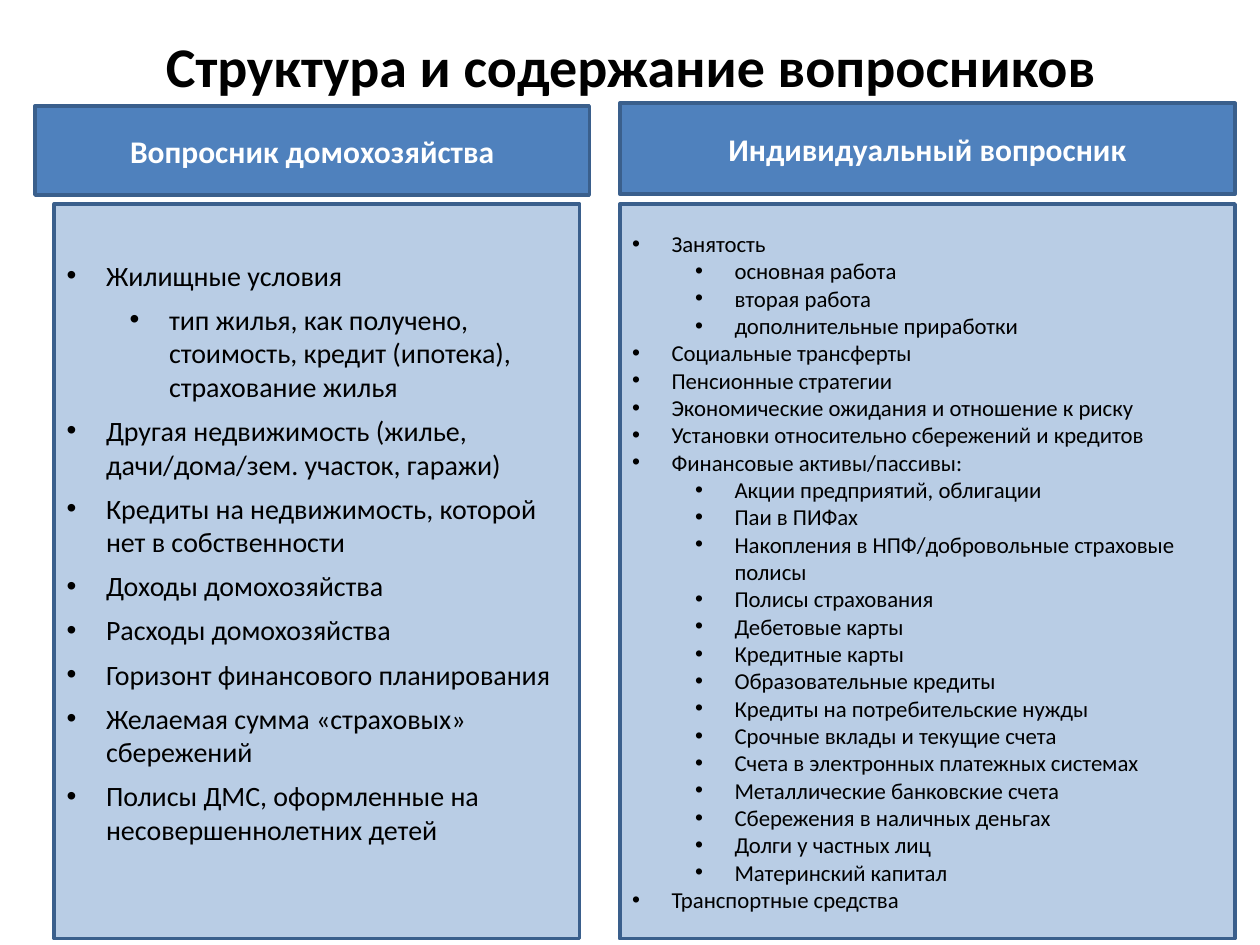
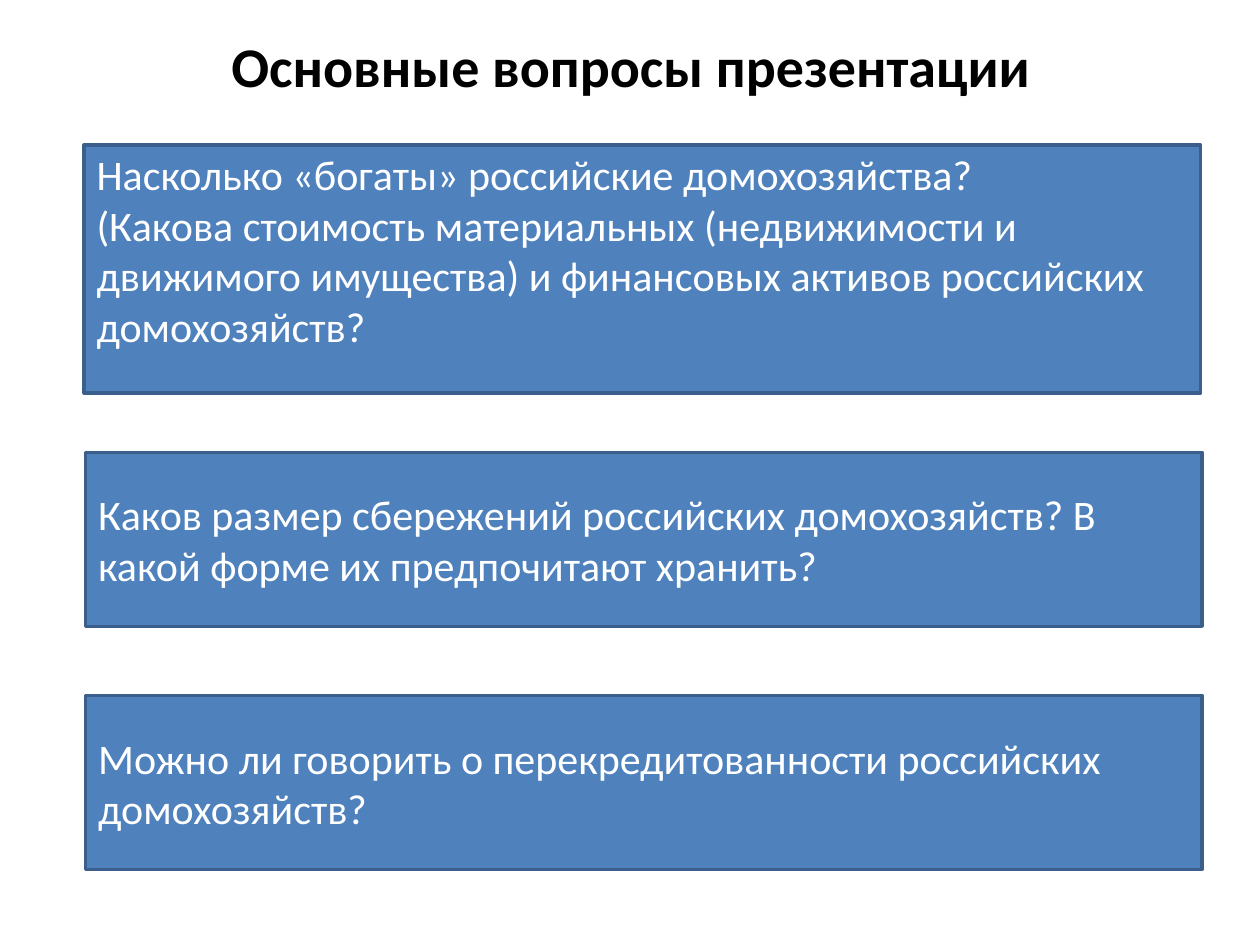
from lxml import etree
from pptx import Presentation
from pptx import util as u
from pptx.dml.color import RGBColor
from pptx.enum import shapes, text
from pptx.oxml import ns

COLORS = {"blue": "4F81BD", "pale": "B9CDE5", "border": "3A5F8C", "black": "000000", "white": "FFFFFF"}
FONT = "Calibri"
BULLET_INDENT = 22.5
LEVEL_STEP = 36
EMPTY_LINE = 22

HOUSEHOLD_TOPICS = [
    (0, "Жилищные условия"),
    (1, "тип жилья, как получено, стоимость, кредит (ипотека), страхование жилья"),
    (0, "Другая недвижимость (жилье, дачи/дома/зем. участок, гаражи)"),
    (0, "Кредиты на недвижимость, которой нет в собственности"),
    (0, "Доходы домохозяйства"),
    (0, "Расходы домохозяйства"),
    (0, "Горизонт финансового планирования"),
    (0, "Желаемая сумма «страховых» сбережений"),
    (0, "Полисы ДМС, оформленные на несовершеннолетних детей"),
]
INDIVIDUAL_TOPICS = [
    (0, "Занятость"),
    (1, "основная работа"),
    (1, "вторая работа"),
    (1, "дополнительные приработки"),
    (0, "Социальные трансферты"),
    (0, "Пенсионные стратегии"),
    (0, "Экономические ожидания и отношение к риску"),
    (0, "Установки относительно сбережений и кредитов"),
    (0, "Финансовые активы/пассивы:"),
    (1, "Акции предприятий, облигации"),
    (1, "Паи в ПИФах"),
    (1, "Накопления в НПФ/добровольные страховые полисы"),
    (1, "Полисы страхования"),
    (1, "Дебетовые карты"),
    (1, "Кредитные карты"),
    (1, "Образовательные кредиты"),
    (1, "Кредиты на потребительские нужды"),
    (1, "Срочные вклады и текущие счета"),
    (1, "Счета в электронных платежных системах"),
    (1, "Металлические банковские счета"),
    (1, "Сбережения в наличных деньгах"),
    (1, "Долги у частных лиц"),
    (1, "Материнский капитал"),
    (0, "Транспортные средства"),
]
QUESTIONS = [
    (48.1, 82.8, 141.8, EMPTY_LINE,
     "Насколько «богаты» российские домохозяйства?\v(Какова стоимость материальных (недвижимости и "
     "движимого имущества) и финансовых активов российских домохозяйств?"),
    (49, 258.5, 99.4, 0, "Каков размер сбережений российских домохозяйств? В какой форме их предпочитают хранить?"),
    (49, 397.4, 99.4, 0, "Можно ли говорить о перекредитованности российских домохозяйств?"),
]


def rgb(name):
    """Return the named colour."""
    return RGBColor.from_string(COLORS[name])


def style_paragraph(paragraph, size, color, bold=False, align=text.PP_ALIGN.LEFT):
    """Set the font and alignment of a paragraph."""
    paragraph.alignment = align
    font = paragraph.font
    font.name, font.size, font.bold = FONT, u.Pt(size), bold
    font.color.rgb = rgb(color)


def add_bullet(paragraph, level):
    """Give a paragraph a hanging bullet at the given level."""
    paragraph.level = level
    properties = paragraph._p.get_or_add_pPr()
    properties.set("marL", str(u.Pt(BULLET_INDENT + level * LEVEL_STEP)))
    properties.set("indent", str(-u.Pt(BULLET_INDENT)))
    etree.SubElement(properties, ns.qn("a:buFont")).set("typeface", "Arial")
    etree.SubElement(properties, ns.qn("a:buChar")).set("char", "•")


def add_title(slide, wording):
    """Add the centred slide title."""
    box = slide.shapes.add_textbox(u.Pt(36.7), u.Pt(9.4), u.Pt(648), u.Pt(55.4))
    frame = box.text_frame
    frame.word_wrap = True
    frame.vertical_anchor = text.MSO_ANCHOR.MIDDLE
    paragraph = frame.paragraphs[0]
    paragraph.text = wording
    style_paragraph(paragraph, 32, "black", True, text.PP_ALIGN.CENTER)


def add_panel(slide, left, top, width, height, fill, extra_bottom=0):
    """Add a bordered rectangle and return its text frame."""
    shape = slide.shapes.add_shape(
        shapes.MSO_SHAPE.RECTANGLE, u.Pt(left), u.Pt(top), u.Pt(width), u.Pt(height))
    shape.shadow.inherit = False
    shape.fill.solid()
    shape.fill.fore_color.rgb = rgb(fill)
    shape.line.color.rgb = rgb("border")
    shape.line.width = u.Pt(2)
    frame = shape.text_frame
    frame.word_wrap = True
    frame.vertical_anchor = text.MSO_ANCHOR.MIDDLE
    frame.margin_bottom = u.Pt(3.6 + extra_bottom)
    return frame


def add_header(slide, left, top, width, height, wording):
    """Add a blue column header."""
    paragraph = add_panel(slide, left, top, width, height, "blue").paragraphs[0]
    paragraph.text = wording
    style_paragraph(paragraph, 18, "white", True, text.PP_ALIGN.CENTER)


def add_topic_list(slide, left, width, topics, size, space_after=0, extra_bottom=0):
    """Add a pale panel with a two-level bulleted list."""
    frame = add_panel(slide, left, 116.6, width, 419.8, "pale", extra_bottom)
    for index, (level, wording) in enumerate(topics):
        paragraph = frame.add_paragraph() if index else frame.paragraphs[0]
        paragraph.text = wording
        add_bullet(paragraph, level)
        paragraph.space_after = u.Pt(space_after)
        style_paragraph(paragraph, size, "black")


def add_question(slide, left, top, height, extra_bottom, wording):
    """Add a blue panel holding one question."""
    paragraph = add_panel(slide, left, top, 637.9, height, "blue", extra_bottom).paragraphs[0]
    paragraph.text = wording
    style_paragraph(paragraph, 24, "white")


def add_slide(presentation, title):
    """Add a blank slide with a title."""
    slide = presentation.slides.add_slide(presentation.slide_layouts[6])
    add_title(slide, title)
    return slide


def main():
    """Build and save the presentation."""
    presentation = Presentation()
    presentation.slide_width, presentation.slide_height = u.Pt(720), u.Pt(540)

    slide = add_slide(presentation, "Структура и содержание вопросников")
    add_header(slide, 20, 60.5, 316.8, 51, "Вопросник домохозяйства")
    add_topic_list(slide, 31, 300.3, HOUSEHOLD_TOPICS, 16, 6, EMPTY_LINE)
    add_header(slide, 354.2, 59, 351.6, 52, "Индивидуальный вопросник")
    add_topic_list(slide, 354.2, 351.6, INDIVIDUAL_TOPICS, 13)

    slide = add_slide(presentation, "Основные вопросы презентации")
    for question in QUESTIONS:
        add_question(slide, *question)

    presentation.save("out.pptx")


if __name__ == "__main__":
    main()
